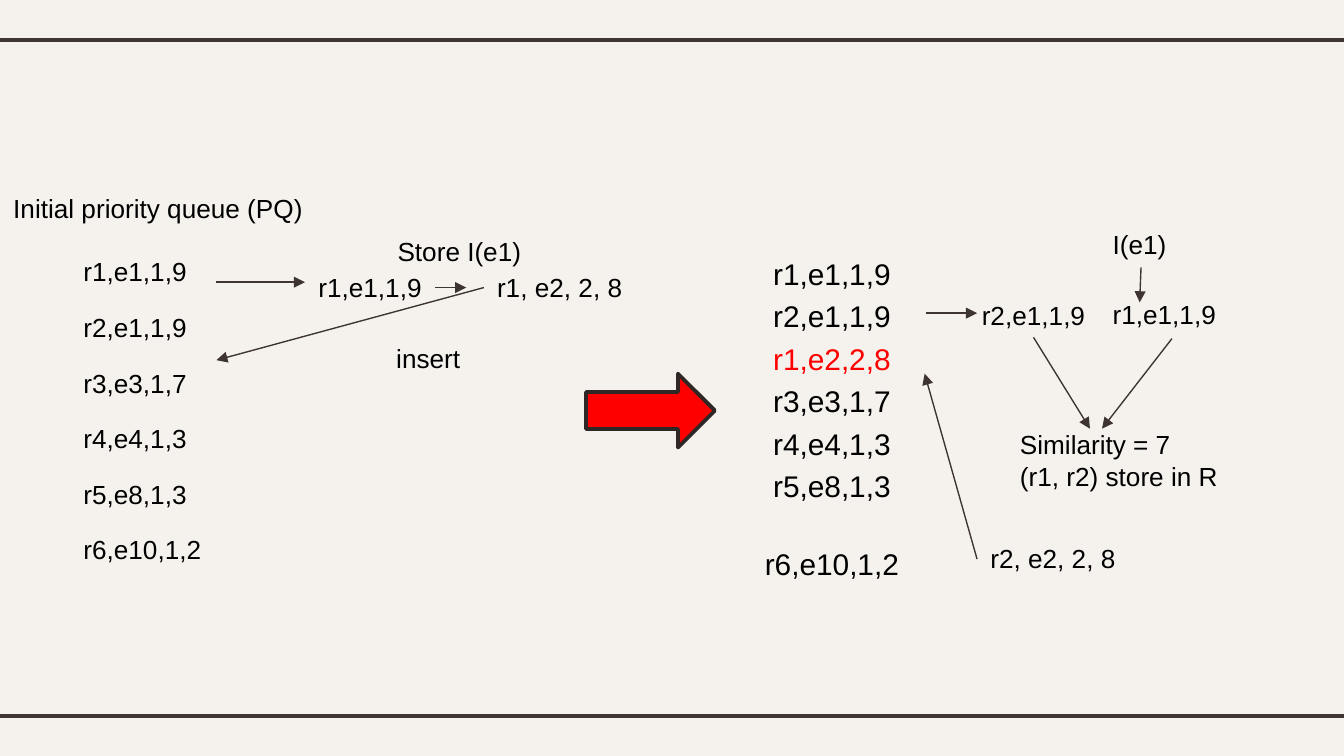
from lxml import etree
from pptx import Presentation
from pptx.dml.color import RGBColor
from pptx.enum.shapes import MSO_CONNECTOR as CONN, MSO_SHAPE as SHAPE
from pptx.enum.text import MSO_ANCHOR as ANCHOR, MSO_AUTO_SIZE as AUTO, PP_ALIGN as ALIGN
from pptx.oxml.ns import qn
from pptx.util import Inches, Pt

COLORS = {"bg": "F5F2EE", "rule": "3F3533", "line": "3E3432",
          "edge": "2F2726", "text": "000000", "red": "FF0000"}
NO_STYLE_NO_GRID = "{2D5ABB26-0587-4C30-8999-92F81FD0307C}"


def rgb(name):
    """Return the palette colour with this name."""
    return RGBColor.from_string(COLORS[name])


def set_font(p, size, color="text"):
    """Set the font of a paragraph."""
    p.font.name = "Arial"
    p.font.size = Pt(size)
    p.font.color.rgb = rgb(color)


def add_line(slide, start, end, color="line", width=0.75, arrow=True):
    """Draw a straight line, with an arrowhead at its end if asked."""
    s = slide.shapes.add_connector(CONN.STRAIGHT, *map(Inches, start + end))
    s.line.color.rgb = rgb(color)
    s.line.width = Pt(width)
    sp_pr = s._element.spPr
    if arrow:
        etree.SubElement(sp_pr.find(qn("a:ln")), qn("a:tailEnd"), type="triangle")
    etree.SubElement(sp_pr, qn("a:effectLst"))


def add_label(slide, text, x, y, w, h=0.34, wrap=True, align=ALIGN.LEFT):
    """Place a 14 pt label, one paragraph for each line of text."""
    tf = slide.shapes.add_textbox(*map(Inches, (x, y, w, h))).text_frame
    tf.word_wrap = wrap
    tf.auto_size = AUTO.SHAPE_TO_FIT_TEXT
    tf.text = text
    for p in tf.paragraphs:
        p.alignment = align
        set_font(p, 14)


def add_queue(slide, x, y, w, entries, heights, size, margins,
              anchor=ANCHOR.TOP, align=ALIGN.LEFT, inserted=None):
    """Place a one-column table of queue entries, the inserted one in red."""
    frame = slide.shapes.add_table(len(entries), 1, *map(Inches, (x, y, w, sum(heights))))
    table = frame.table
    table.first_row = table.horz_banding = False
    table._tbl.tblPr.find(qn("a:tableStyleId")).text = NO_STYLE_NO_GRID
    for row, entry, height in zip(table.rows, entries, heights):
        row.height = Inches(height)
        cell = row.cells[0]
        cell.fill.background()
        cell.vertical_anchor = anchor
        (cell.margin_left, cell.margin_top,
         cell.margin_right, cell.margin_bottom) = map(Inches, margins)
        cell.text = entry
        p = cell.text_frame.paragraphs[0]
        p.alignment = align
        set_font(p, size, "red" if entry == inserted else "text")


def add_frame(slide, w):
    """Paint the background and the two rules across the slide."""
    slide.background.fill.solid()
    slide.background.fill.fore_color.rgb = rgb("bg")
    for y in (0.3, 5.33):
        add_line(slide, (-0.08, y), (w + 0.08, y), "rule", 2.25, arrow=False)


def add_initial_step(slide, x, y):
    """Show the initial queue, with its first entry stored and reinserted."""
    add_label(slide, "Initial priority queue (PQ)", x, y, 2.37, wrap=False)
    entries = ["r1,e1,1,9", "r2,e1,1,9", "r3,e3,1,7", "r4,e4,1,3", "r5,e8,1,3", "r6,e10,1,2"]
    add_queue(slide, x + 0.52, y + 0.44, 1.08, entries, [0.35] + [0.38] * 5, 14,
              [0.1, 0.1, 0.1, 0.08])
    add_label(slide, "r1,e1,1,9", x + 2.27, y + 0.59, 1.08)
    add_label(slide, "Store I(e1)", x + 2.86, y + 0.32, 1.14)
    add_label(slide, "insert", x + 2.85, y + 1.12, 0.73)
    add_label(slide, "r1, e2, 2, 8", x + 3.6, y + 0.59, 1.21)
    for x1, y1, x2, y2 in ((1.61, 0.72, 2.27, 0.72), (3.24, 0.76, 3.47, 0.76),
                           (3.6, 0.76, 1.61, 1.3)):
        add_line(slide, (x + x1, y + y1), (x + x2, y + y2))


def add_step_arrow(slide, x, y, w, h):
    """Draw the red block arrow between the two steps."""
    s = slide.shapes.add_shape(SHAPE.RIGHT_ARROW, *map(Inches, (x, y, w, h)))
    s.shadow.inherit = False
    s.fill.solid()
    s.fill.fore_color.rgb = rgb("red")
    s.line.color.rgb = rgb("edge")
    s.line.width = Pt(2)


def add_next_step(slide, x, y):
    """Show the updated queue and the similarity found from I(e1)."""
    entries = ["r1,e1,1,9", "r2,e1,1,9", "r1,e2,2,8", "r3,e3,1,7",
               "r4,e4,1,3", "r5,e8,1,3", "r6,e10,1,2"]
    first, last = 0.34, 0.58
    heights = [first] + [(2.5 - first - last) / 5] * 5 + [last]
    add_queue(slide, x, y + 0.18, 1.38, entries, heights, 16,
              [0.01, 0.01, 0.01, 0], ANCHOR.BOTTOM, ALIGN.CENTER, "r1,e2,2,8")
    add_label(slide, "I(e1)", x + 2.68, y, 0.62)
    add_label(slide, "r2,e1,1,9", x + 1.68, y + 0.53, 1.02, align=ALIGN.CENTER)
    add_label(slide, "r1,e1,1,9", x + 2.68, y + 0.52, 1.08)
    add_label(slide, "Similarity = 7\n(r1, r2) store in R", x + 1.99, y + 1.49, 1.72, 0.57)
    add_label(slide, "r2, e2, 2, 8", x + 1.77, y + 2.34, 1.21)
    for x1, y1, x2, y2 in ((1.39, 0.68, 1.77, 0.68), (2.99, 0.34, 2.98, 0.6),
                           (2.19, 0.86, 2.61, 1.54), (3.22, 0.87, 2.7, 1.54),
                           (1.77, 2.51, 1.38, 1.13)):
        add_line(slide, (x + x1, y + y1), (x + x2, y + y2))


def main():
    """Build and save the slide."""
    prs = Presentation()
    prs.slide_width = Inches(10)
    prs.slide_height = prs.slide_width * 9 // 16
    slide = prs.slides.add_slide(prs.slide_layouts[6])
    add_frame(slide, 10)
    add_initial_step(slide, 0, 1.38)
    add_step_arrow(slide, 4.36, 2.78, 0.96, 0.55)
    add_next_step(slide, 5.5, 1.65)
    prs.save("out.pptx")


if __name__ == "__main__":
    main()
